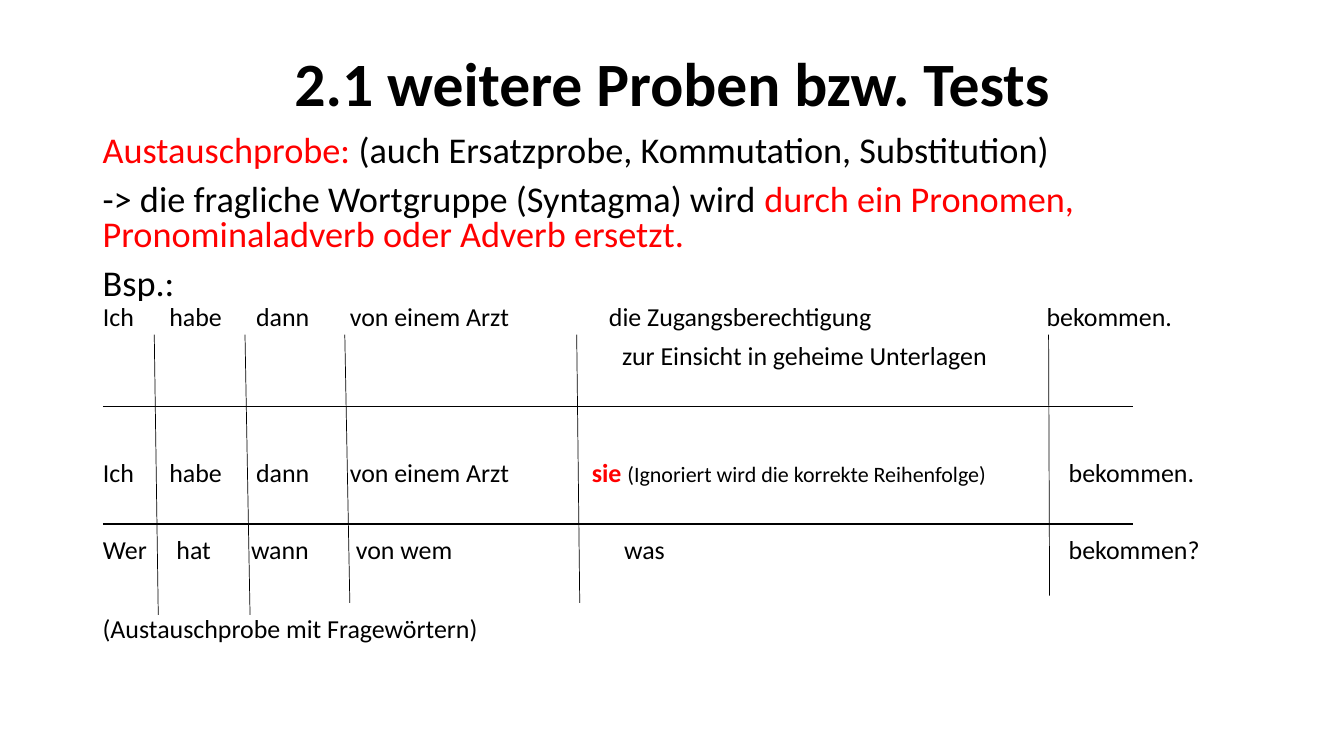
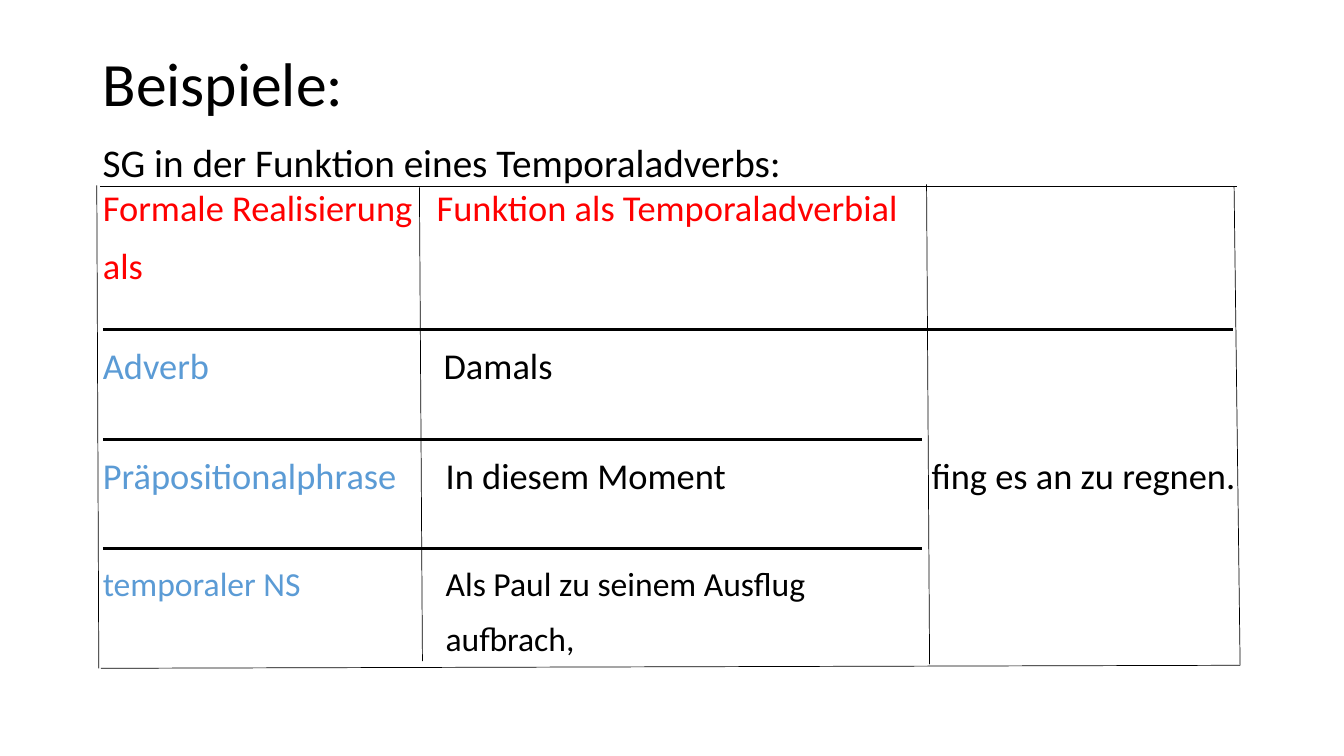
import pptx
import pptx.util
import pptx.dml.color
import pptx.enum.text
import pptx.enum.shapes
import pptx.oxml.ns
import lxml.etree

Inches = pptx.util.Inches
Pt = pptx.util.Pt
RGBColor = pptx.dml.color.RGBColor
ALIGN = pptx.enum.text.PP_ALIGN
ANCHOR = pptx.enum.text.MSO_ANCHOR

BLACK = RGBColor(0x00, 0x00, 0x00)
RED = RGBColor(0xFF, 0x00, 0x00)
BLUE = RGBColor(0x5B, 0x9B, 0xD5)
FONT = "Calibri"
LEFT, WIDTH = 0.92, 11.5
THIN = 0.5


def style(run, size, color=BLACK, bold=False):
    font = run.font
    font.name, font.size, font.bold = FONT, Pt(size), bold
    font.color.rgb = color


def write(frame, paras, size, space=1.0, gap=10):
    """Each paragraph is a list of runs: (text, colour, bold, size)."""
    for num, runs in enumerate(paras):
        para = frame.add_paragraph() if num else frame.paragraphs[0]
        para.line_spacing = space
        para.space_before = Pt(gap if num else 0)
        for text, *look in runs:
            run = para.add_run()
            run.text = text
            color, bold, own = (look + [BLACK, False, size][len(look):])
            style(run, own, color, bold)
    return frame


def add_text(slide, box, paras, size, space=1.0):
    frame = slide.shapes.add_textbox(*map(Inches, box)).text_frame
    frame.word_wrap = True
    return write(frame, paras, size, space)


def add_title(slide, text, bold=False, align=ALIGN.LEFT):
    frame = add_text(slide, (LEFT, 0.4, WIDTH, 0.91), [[(text, BLACK, bold)]], 44, 0.9)
    frame.vertical_anchor = ANCHOR.MIDDLE
    frame.paragraphs[0].alignment = align


def add_grid(slide, x, y, cols, rows, cells, gap=10):
    """Rows are (height, top inset, size); cells map (row, col) to (indent, paragraphs)."""
    high = sum(row[0] for row in rows)
    shape = slide.shapes.add_table(len(rows), len(cols), Inches(x), Inches(y),
                                   Inches(sum(cols)), Inches(high))
    table = shape.table
    table.first_row = table.horz_banding = False
    for col, wide in zip(table.columns, cols):
        col.width = Inches(wide)
    for r, (tall, inset, size) in enumerate(rows):
        table.rows[r].height = Inches(tall)
        for c in range(len(cols)):
            indent, paras = cells.get((r, c), (0, []))
            cell = table.cell(r, c)
            cell.fill.background()
            cell.margin_left = Inches(indent)
            cell.margin_right = cell.margin_bottom = 0
            cell.margin_top = Inches(inset)
            write(cell.text_frame, paras, size, gap=gap)
            if not paras:
                cell.text_frame.paragraphs[0].font.size = Pt(12)


def add_rules(slide, x, y, rules, weight):
    """Rules are (from x, from y, to x, to y), measured from the grid corner."""
    for x1, y1, x2, y2 in rules:
        line = slide.shapes.add_connector(
            pptx.enum.shapes.MSO_CONNECTOR.STRAIGHT,
            Inches(x + x1), Inches(y + y1), Inches(x + x2), Inches(y + y2))
        line.line.color.rgb = BLACK
        line.line.width = Pt(weight)
        props = line._element.spPr
        lxml.etree.SubElement(props, pptx.oxml.ns.qn("a:effectLst"))


def build_tests(slide):
    add_title(slide, "2.1 weitere Proben bzw. Tests", True, ALIGN.CENTER)
    add_text(slide, (LEFT, 1.3, WIDTH, 1.7), [
        [("Austauschprobe:", RED), (" (auch Ersatzprobe, Kommutation, Substitution)",)],
        [("-> die fragliche Wortgruppe (Syntagma) wird ",),
         ("durch ein Pronomen, Pronominaladverb oder Adverb ersetzt.", RED)],
        [("Bsp.:",)],
    ], 25.9, 0.8)

    # Sentence grid: the parts and what replaces them
    x, y, size = 1.02, 2.99, 18.5
    cols = [0.53, 0.9, 1.0, 2.28, 4.65, 1.6]
    rows = [(0.33, 0, size), (0.71, 0.06, size), (1.17, 0.51, size), (0.8, 0.11, size)]
    lines = {
        0: [(0, "Ich"), (0.13, "habe"), (0.09, "dann"), (0.02, "von einem Arzt"),
            (0.31, "die Zugangsberechtigung"), (0, "bekommen.")],
        2: [(0, "Ich"), (0.13, "habe"), (0.09, "dann"), (0.02, "von einem Arzt"),
            (0.14, ""), (0.22, "bekommen.")],
        3: [(0, "Wer"), (0.2, "hat"), (0.04, "wann"), (0.08, "von wem"),
            (0.46, "was"), (0.22, "bekommen?")],
    }
    cells = {(r, c): (indent, [[(text,)]])
             for r, line in lines.items() for c, (indent, text) in enumerate(line)}
    cells[1, 4] = (0.44, [[("zur Einsicht in geheime Unterlagen",)]])
    cells[2, 4] = (0.14, [[("sie ", RED, True),
                           ("(Ignoriert wird die korrekte Reihenfolge)", BLACK, False, 15.7)]])
    add_grid(slide, x, y, cols, rows, cells)
    add_rules(slide, x, y, [(0, high, 10.22, high) for high in (1.04, 2.21)], 1)
    add_rules(slide, x, y, [
        (top, 0.33, foot, end) for top, foot, end in (
            (0.51, 0.55, 3.11), (1.41, 1.46, 3.11), (2.4, 2.45, 2.99),
            (4.7, 4.73, 2.99), (9.38, 9.39, 2.92))], THIN)

    # Remark under the grid
    add_text(slide, (LEFT, 6.03, WIDTH, 0.42),
             [[("(Austauschprobe mit Fragewörtern)",)]], size)


def build_samples(slide):
    add_title(slide, "Beispiele:")
    add_text(slide, (LEFT, 1.38, WIDTH, 0.5),
             [[("SG in der Funktion eines Temporaladverbs:",)]], 28, 0.9)

    # Forms and their function
    x, y = 1.02, 1.85
    cols = [3.16, 5.02, 3.2]
    rows = [(1.42, 0, 26), (1.09, 0.15, 26), (1.08, 0.15, 26), (1.18, 0.16, 24)]
    cells = {
        (0, 0): (0, [[("Formale Realisierung", RED)], [("als", RED)]]),
        (0, 1): (0.15, [[("Funktion als Temporaladverbial", RED)]]),
        (1, 0): (0, [[("Adverb", BLUE)]]),
        (1, 1): (0.22, [[("Damals",)]]),
        (2, 0): (0, [[("Präpositionalphrase", BLUE)]]),
        (2, 1): (0.24, [[("In diesem Moment",)]]),
        (2, 2): (0.04, [[("fing es an zu regnen.",)]]),
        (3, 0): (0, [[("temporaler NS", BLUE)]]),
        (3, 1): (0.24, [[("Als Paul zu seinem Ausflug",)], [("aufbrach,",)]]),
    }
    add_grid(slide, x, y, cols, rows, cells)
    add_rules(slide, x, y, [(0, high, wide, high) for high, wide in (
        (1.42, 11.21), (2.51, 8.12), (3.59, 8.12))], 1.75)

    # Dividers and outer frame
    add_rules(slide, x, y, [
        (3.14, 0.01, 3.17, 4.71), (8.17, -0.02, 8.2, 4.74),
        (-0.06, -0.01, -0.04, 4.78), (11.22, 0, 11.28, 4.75),
        (-0.02, 4.78, 11.28, 4.75), (-0.03, 0, 11.25, 0)], THIN)


def main():
    deck = pptx.Presentation()
    deck.slide_width, deck.slide_height = Inches(13.33), Inches(7.5)
    for build in (build_tests, build_samples):
        build(deck.slides.add_slide(deck.slide_layouts[6]))
    deck.save("out.pptx")


if __name__ == "__main__":
    main()
